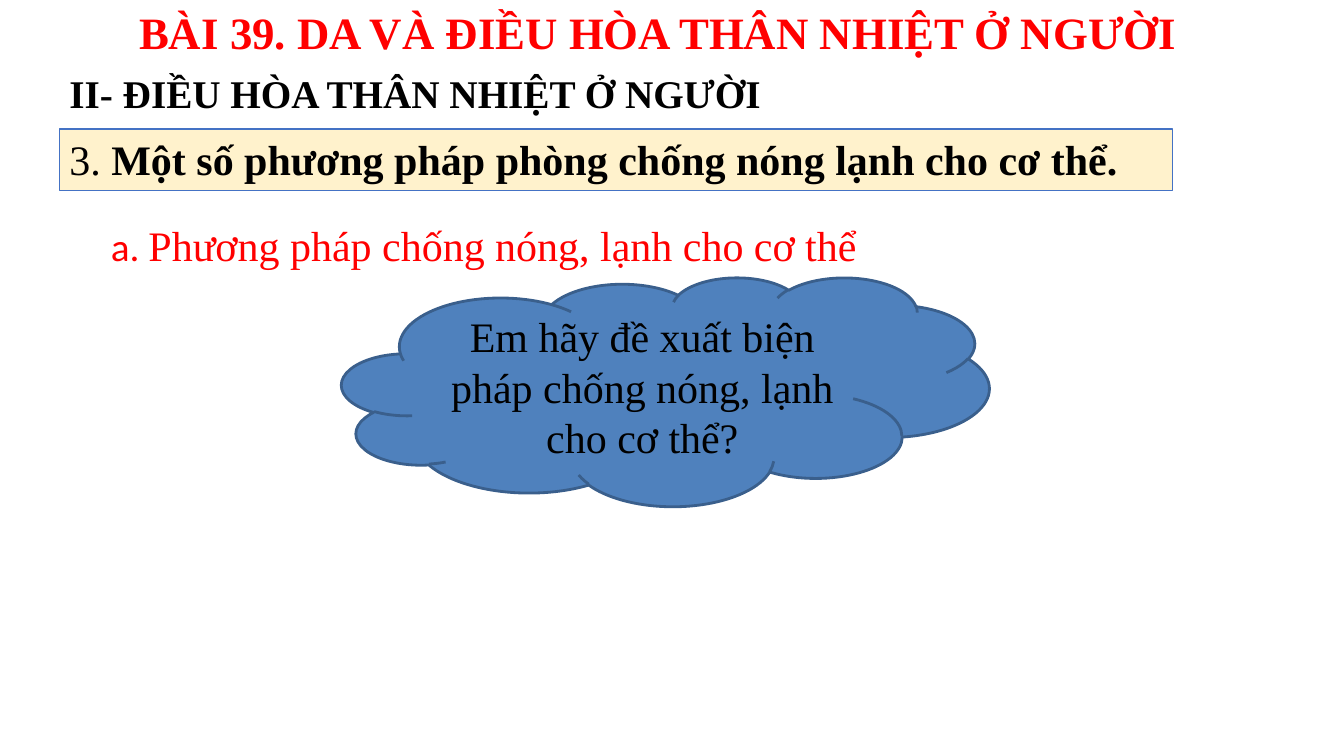
from pptx import Presentation
from pptx import util as u
from pptx.dml.color import RGBColor
from pptx.enum import shapes, text

BLACK = RGBColor(0x00, 0x00, 0x00)
RED = RGBColor(0xFF, 0x00, 0x00)
DARK = RGBColor(0x26, 0x26, 0x26)
CREAM = RGBColor(0xFF, 0xF2, 0xCC)
BLUE = RGBColor(0x44, 0x72, 0xC4)
CLOUD = RGBColor(0x4F, 0x81, 0xBD)
CLOUD_EDGE = RGBColor(0x3A, 0x5F, 0x8C)
SERIF = "Times New Roman"
SANS = "Calibri"


class Lesson:
    """Hold the slide and the style of its elements, with lengths in px at 100 to the inch."""

    PX = 9144

    def __init__(self, width, height):
        self.prs = Presentation()
        self.prs.slide_width = self.emu(width)
        self.prs.slide_height = self.emu(height)
        self.s = self.prs.slides.add_slide(self.prs.slide_layouts[5])

    def emu(self, px):
        return u.Emu(px * self.PX)

    def fill_text(self, sp, runs, anchor=text.MSO_ANCHOR.TOP, align=text.PP_ALIGN.LEFT):
        tf = sp.text_frame
        tf.word_wrap = True
        tf.auto_size = text.MSO_AUTO_SIZE.NONE
        tf.vertical_anchor = anchor
        p = tf.paragraphs[0]
        p.alignment = align
        for words, size, color, bold, font in runs:
            r = p.add_run()
            r.text = words
            r.font.size = u.Pt(size)
            r.font.color.rgb = color
            r.font.bold = bold
            r.font.name = font

    def title(self, box, runs):
        sp = self.s.shapes.title
        sp.left, sp.top, sp.width, sp.height = map(self.emu, box)
        self.fill_text(sp, runs)

    def label(self, box, runs):
        self.fill_text(self.s.shapes.add_textbox(*map(self.emu, box)), runs)

    def shape(self, kind, box, fill, line, weight, runs, **layout):
        sp = self.s.shapes.add_shape(kind, *map(self.emu, box))
        sp.shadow.inherit = False
        sp.fill.solid()
        sp.fill.fore_color.rgb = fill
        sp.line.color.rgb = line
        sp.line.width = u.Pt(weight)
        self.fill_text(sp, runs, **layout)


def main():
    lesson = Lesson(1333, 750)
    lesson.title((128, 0, 1058, 64), [
        ("BÀI 39. DA VÀ ĐIỀU HÒA THÂN NHIỆT Ở NGƯỜI", 32, RED, True, SERIF)])
    lesson.label((59, 64, 858, 57), [
        ("II- ĐIỀU HÒA THÂN NHIỆT Ở NGƯỜI", 28, BLACK, True, SERIF)])
    lesson.shape(shapes.MSO_SHAPE.RECTANGLE, (59, 128, 1104, 61), CREAM, BLUE, 0.75, [
        ("3. ", 30, BLACK, False, SERIF),
        ("Một số phương pháp phòng chống nóng lạnh cho cơ thể.", 30, BLACK, True, SERIF)])
    lesson.label((88, 200, 1144, 76), [
        (" ", 39, DARK, False, SANS),
        ("a. ", 28, RED, False, SANS),
        ("Phương pháp chống nóng, lạnh cho cơ thể", 30, RED, False, SERIF)])
    lesson.shape(shapes.MSO_SHAPE.CLOUD, (339, 275, 642, 227), CLOUD, CLOUD_EDGE, 2, [
        ("Em hãy đề xuất biện pháp chống nóng, lạnh cho cơ thể?", 30, BLACK, False, SERIF)],
        anchor=text.MSO_ANCHOR.MIDDLE, align=text.PP_ALIGN.CENTER)
    lesson.prs.save("out.pptx")


if __name__ == "__main__":
    main()
